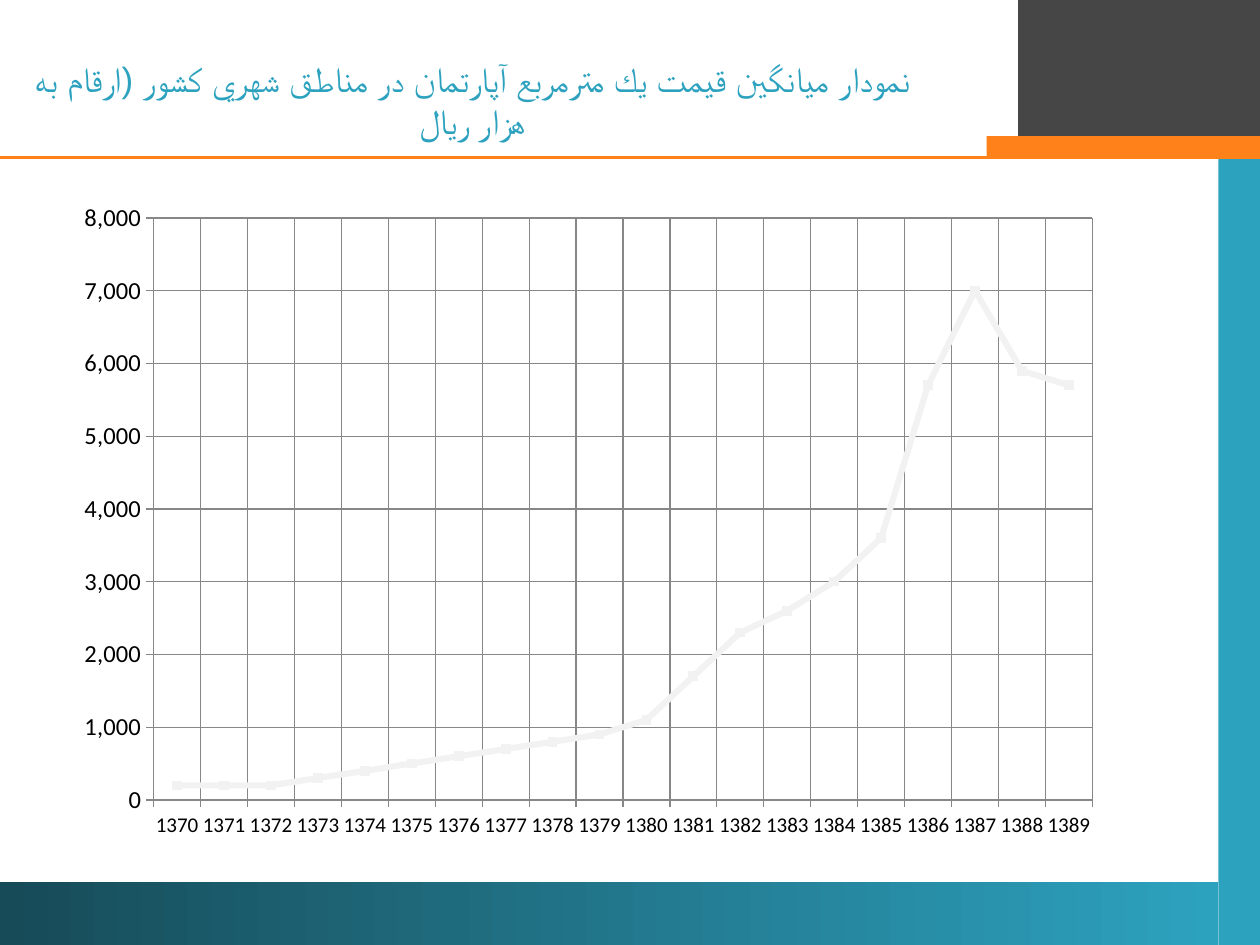
from lxml import etree
from pptx import Presentation
from pptx import util as u
from pptx.chart.data import CategoryChartData
from pptx.dml.color import RGBColor
from pptx.enum import chart as ch, shapes, text
from pptx.oxml import parse_xml
from pptx.oxml.ns import nsdecls, qn

WIDTH, HEIGHT = 10, 7.5
TEAL, ORANGE, GRID, BLACK = "2DA2BF", "FF8119", "878787", "000000"
TITLE = "نمودار ميانگين قيمت يك مترمربع آپارتمان در مناطق شهري كشور (ارقام به هزار ريال"
FIRST_YEAR = 1370
PRICES = [200, 200, 200, 300, 400, 500, 600, 700, 800, 900,
          1100, 1700, 2300, 2600, 3000, 3600, 5700, 7000, 5900, 5700]
HEADER, RULE, FOOTER, SIDE = 1.08, 1.25, 7, 9.67
BANDS = [
    ((0, 0, WIDTH, HEADER), [TEAL, "16335E"]),
    ((SIDE, 0.25, WIDTH - SIDE, HEIGHT - 0.25), [TEAL]),
    ((0, 0, 8.33, 1.17), ["FFFFFF"]),
    ((0, FOOTER, SIDE, HEIGHT - FOOTER), ["174B58", TEAL]),
    ((8.08, 0, WIDTH - 8.08, HEADER), ["464646"]),
]
TAB = ((7.83, HEADER, WIDTH - 7.83, RULE - HEADER), [ORANGE])
CHART = (0.5, 1.5, 8.33, 5.25)
PLOT = {"x": 0.72 / 8.33, "y": 0.23 / 5.25, "w": 7.45 / 8.33, "h": 4.62 / 5.25}


def color(value):
    return RGBColor.from_string(value)


def inches(box):
    return [u.Inches(value) for value in box]


def add_band(slide, box, colors):
    shape = slide.shapes.add_shape(shapes.MSO_SHAPE.RECTANGLE, *inches(box))
    shape.shadow.inherit = False
    shape.line.fill.background()
    if len(colors) == 1:
        shape.fill.solid()
        shape.fill.fore_color.rgb = color(colors[0])
    else:
        shape.fill.gradient()
        shape.fill.gradient_angle = 0
        for position, (stop, value) in enumerate(zip(shape.fill.gradient_stops, colors)):
            stop.position = position
            stop.color.rgb = color(value)


def add_rule(slide):
    rule = slide.shapes.add_connector(
        shapes.MSO_CONNECTOR.STRAIGHT, *inches((WIDTH, RULE, 0, RULE)))
    rule.line.color.rgb = color(ORANGE)
    rule.line.width = u.Pt(2.25)
    etree.SubElement(rule._element.spPr, qn("a:effectLst"))


def add_title(slide):
    box = slide.shapes.add_textbox(*inches((0, 0.5, 7.5, 0.58)))
    frame = box.text_frame
    frame.word_wrap = True
    frame.vertical_anchor = text.MSO_ANCHOR.MIDDLE
    paragraph = frame.paragraphs[0]
    paragraph.text = TITLE
    paragraph.alignment = text.PP_ALIGN.CENTER
    properties = paragraph._p.get_or_add_pPr()
    properties.set("rtl", "1")
    paragraph.font.size = u.Pt(20)
    paragraph.font.name = "Arial"
    paragraph.font.color.rgb = color(TEAL)
    defaults = properties.find(qn("a:defRPr"))
    etree.SubElement(defaults, qn("a:cs")).set("typeface", "Arial")


def style_axis(axis, size):
    axis.has_major_gridlines = True
    axis.major_tick_mark = ch.XL_TICK_MARK.CROSS
    for line in (axis.format.line, axis.major_gridlines.format.line):
        line.color.rgb = color(GRID)
        line.width = u.Pt(0.75)
    font = axis.tick_labels.font
    font.size = u.Pt(size)
    font.name = "Calibri"
    font.color.rgb = color(BLACK)


def place_plot(chart):
    parts = "".join(f'<c:{side}Mode val="edge"/>' for side in "xy")
    parts += "".join(f'<c:{key} val="{value:.4f}"/>' for key, value in PLOT.items())
    layout = parse_xml(
        f'<c:layout {nsdecls("c")}><c:manualLayout><c:layoutTarget val="inner"/>'
        f'{parts}</c:manualLayout></c:layout>')
    area = chart._chartSpace.chart.plotArea
    for old in area.findall(qn("c:layout")):
        area.remove(old)
    area.insert(0, layout)


def add_price_chart(slide):
    data = CategoryChartData(number_format="#,##0")
    data.categories = [str(FIRST_YEAR + index) for index in range(len(PRICES))]
    data.add_series("Series 1", PRICES)
    chart = slide.shapes.add_chart(
        ch.XL_CHART_TYPE.LINE_MARKERS, *inches(CHART), data).chart
    chart.has_legend = False
    chart.has_title = False
    chart.font.size = u.Pt(10)
    chart.font.name = "Arial"
    chart.font.color.rgb = color(BLACK)
    style_axis(chart.category_axis, 12)
    style_axis(chart.value_axis, 14)
    chart.value_axis.minimum_scale = 0
    chart.value_axis.maximum_scale = 8000
    chart.value_axis.major_unit = 1000
    chart.value_axis.tick_labels.number_format = "#,##0"
    chart.value_axis.tick_labels.number_format_is_linked = False
    chart.plots[0].vary_by_categories = False
    series = chart.plots[0].series[0]
    series.smooth = False
    series.format.line.color.rgb = color("F2F2F2")
    series.format.line.width = u.Pt(3.5)
    marker = series.marker
    marker.style = ch.XL_MARKER_STYLE.SQUARE
    marker.size = 5
    marker.format.fill.solid()
    marker.format.fill.fore_color.rgb = color("F2F2F2")
    marker.format.line.color.rgb = color("F2F2F2")
    place_plot(chart)


def main():
    presentation = Presentation()
    presentation.slide_width, presentation.slide_height = inches((WIDTH, HEIGHT))
    slide = presentation.slides.add_slide(presentation.slide_layouts[6])
    for box, colors in BANDS:
        add_band(slide, box, colors)
    add_rule(slide)
    add_band(slide, *TAB)
    add_price_chart(slide)
    add_title(slide)
    presentation.save("out.pptx")


if __name__ == "__main__":
    main()
